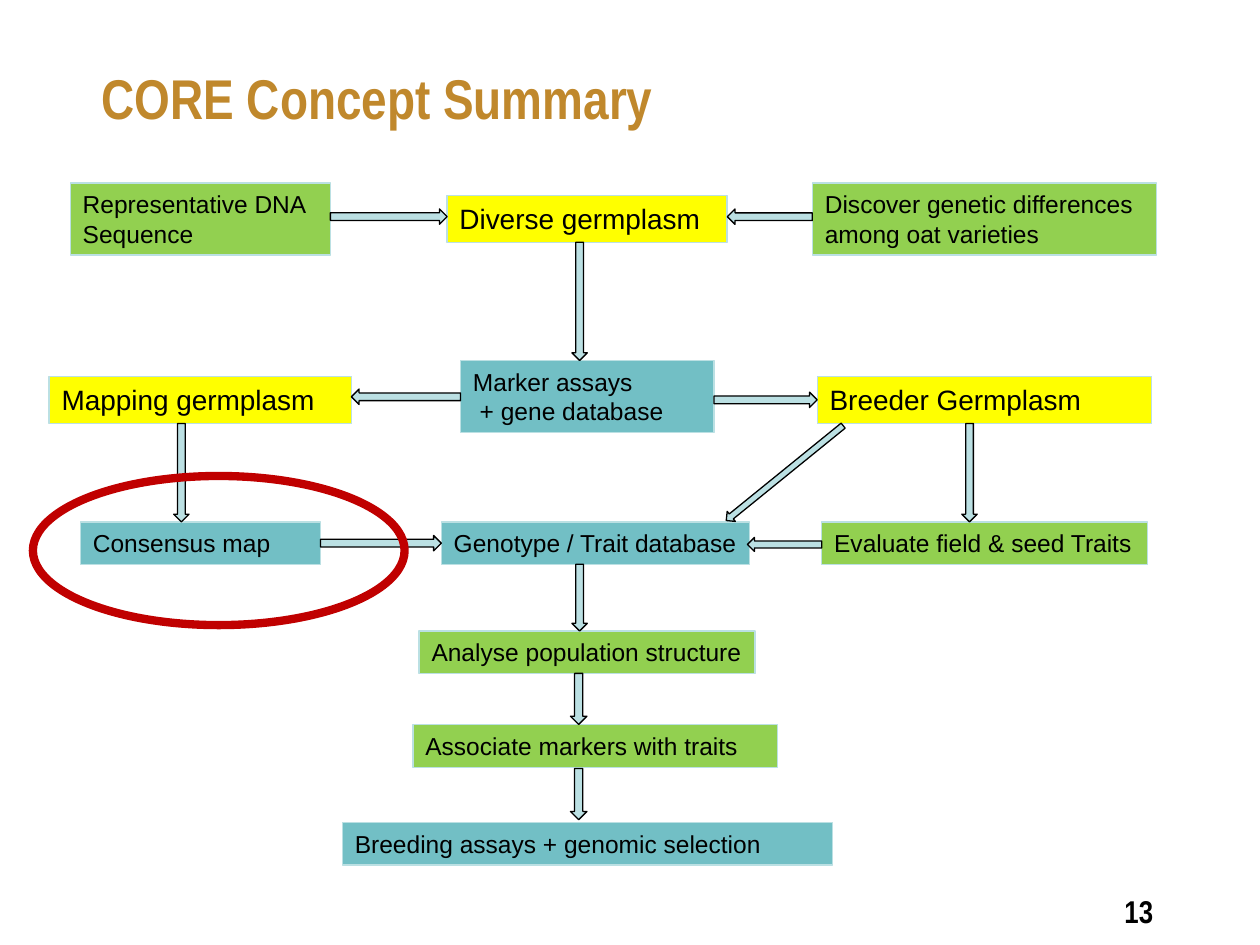
from math import atan2, degrees, hypot

from pptx import Presentation
from pptx.dml.color import RGBColor
from pptx.enum.shapes import MSO_SHAPE as Shape
from pptx.enum.text import MSO_ANCHOR as Anchor, PP_ALIGN as Align
from pptx.util import Pt

GREEN, YELLOW, TEAL = "92D050", "FFFF00", "72BFC5"
PALE, BLACK, GOLD, RED = "BBE0E3", "000000", "C0882C", "C00000"


def color(hex_code):
    return RGBColor.from_string(hex_code)


class FlowSlide:
    body_font = "Arial"
    heading_font = "Arial Narrow"

    def __init__(self, deck):
        self.page = deck.slides.add_slide(deck.slide_layouts[6])

    def add_lines(self, frame, lines, size, font, ink=BLACK, bold=False,
                  align=Align.LEFT, anchor=Anchor.TOP):
        frame.word_wrap = True
        frame.vertical_anchor = anchor
        for index, line in enumerate(lines):
            para = frame.add_paragraph() if index else frame.paragraphs[0]
            para.alignment = align
            span = para.add_run()
            span.text = line
            span.font.name = font
            span.font.size = Pt(size)
            span.font.bold = bold
            span.font.color.rgb = color(ink)

    def heading(self, left, top, width, height, text, size, **style):
        box = self.page.shapes.add_textbox(Pt(left), Pt(top), Pt(width), Pt(height))
        self.add_lines(box.text_frame, [text], size, self.heading_font, bold=True, **style)

    def shape(self, kind, left, top, width, height, fill, line, weight=0.75):
        item = self.page.shapes.add_shape(kind, Pt(left), Pt(top), Pt(width), Pt(height))
        item.shadow.inherit = False
        if fill:
            item.fill.solid()
            item.fill.fore_color.rgb = color(fill)
        else:
            item.fill.background()
        item.line.color.rgb = color(line)
        item.line.width = Pt(weight)
        return item

    def step(self, left, top, width, height, fill, lines):
        size = 16 if fill == YELLOW else 14
        box = self.shape(Shape.RECTANGLE, left, top, width, height, fill, PALE)
        self.add_lines(box.text_frame, lines, size, self.body_font)

    def arrow(self, x1, y1, x2, y2, thickness=8.8):
        length = hypot(x2 - x1, y2 - y1)
        left = (x1 + x2 - length) / 2
        top = (y1 + y2 - thickness) / 2
        item = self.shape(Shape.RIGHT_ARROW, left, top, length, thickness, PALE, BLACK)
        item.rotation = degrees(atan2(y2 - y1, x2 - x1))

    def ring(self, left, top, width, height):
        self.shape(Shape.OVAL, left, top, width, height, None, RED, 4.75)


def main():
    deck = Presentation()
    deck.slide_width, deck.slide_height = Pt(720), Pt(540)
    slide = FlowSlide(deck)

    # Title and page number
    slide.heading(51, 28.8, 612, 53.3, "CORE Concept Summary", 32,
                  ink=GOLD, anchor=Anchor.MIDDLE)
    slide.heading(516.2, 506.2, 149.8, 36, "13", 18, align=Align.RIGHT)

    # Steps: left, top, width, height, fill, lines
    one_line, two_lines, large_line = 24.3, 41.2, 26.7
    for step in [
        (40.2, 104.5, 148.5, two_lines, GREEN, ["Representative DNA Sequence"]),
        (464.3, 104.5, 196.5, two_lines, GREEN,
         ["Discover genetic differences among oat varieties"]),
        (255.5, 111.8, 160, large_line, YELLOW, ["Diverse germplasm"]),
        (263.2, 206, 144.8, two_lines, TEAL, ["Marker assays", " + gene database"]),
        (28.1, 215.3, 172.8, large_line, YELLOW, ["Mapping germplasm"]),
        (467, 215.3, 191, large_line, YELLOW, ["Breeder Germplasm"]),
        (469.6, 298.2, 186, one_line, GREEN, ["Evaluate field & seed Traits"]),
        (252.2, 298.2, 176, one_line, TEAL, ["Genotype / Trait database"]),
        (46, 298.2, 137.3, one_line, TEAL, ["Consensus map"]),
        (239.5, 360.6, 192, one_line, GREEN, ["Analyse population structure"]),
        (236, 414.2, 208.3, one_line, GREEN, ["Associate markers with traits"]),
        (195.7, 470, 280, one_line, TEAL, ["Breeding assays + genomic selection"]),
    ]:
        slide.step(*step)

    # Arrows: from x, from y, to x, to y, and thickness where it differs
    for arrow in [
        (188.8, 123.8, 255.5, 123.8),
        (464.2, 123.8, 415.6, 123.8),
        (331.2, 138.4, 331.2, 206),
        (408, 228.5, 467, 228.5),
        (263.2, 226.7, 200.8, 226.7),
        (103.6, 242, 103.6, 298.2),
        (554, 242, 554, 298.2),
        (183.2, 310.4, 252.2, 310.4),
        (469.6, 311.1, 427.1, 311.1, 8),
        (481.8, 243.2, 415, 297.4, 7.4),
        (331.2, 322.5, 331.2, 360.6),
        (330.7, 384.8, 330.7, 414, 9.4),
        (330.7, 439.2, 330.7, 468.4, 9.4),
    ]:
        slide.arrow(*arrow)

    # Highlight around the consensus map
    slide.ring(18.8, 272, 212.4, 85.2)

    deck.save("out.pptx")


if __name__ == "__main__":
    main()
